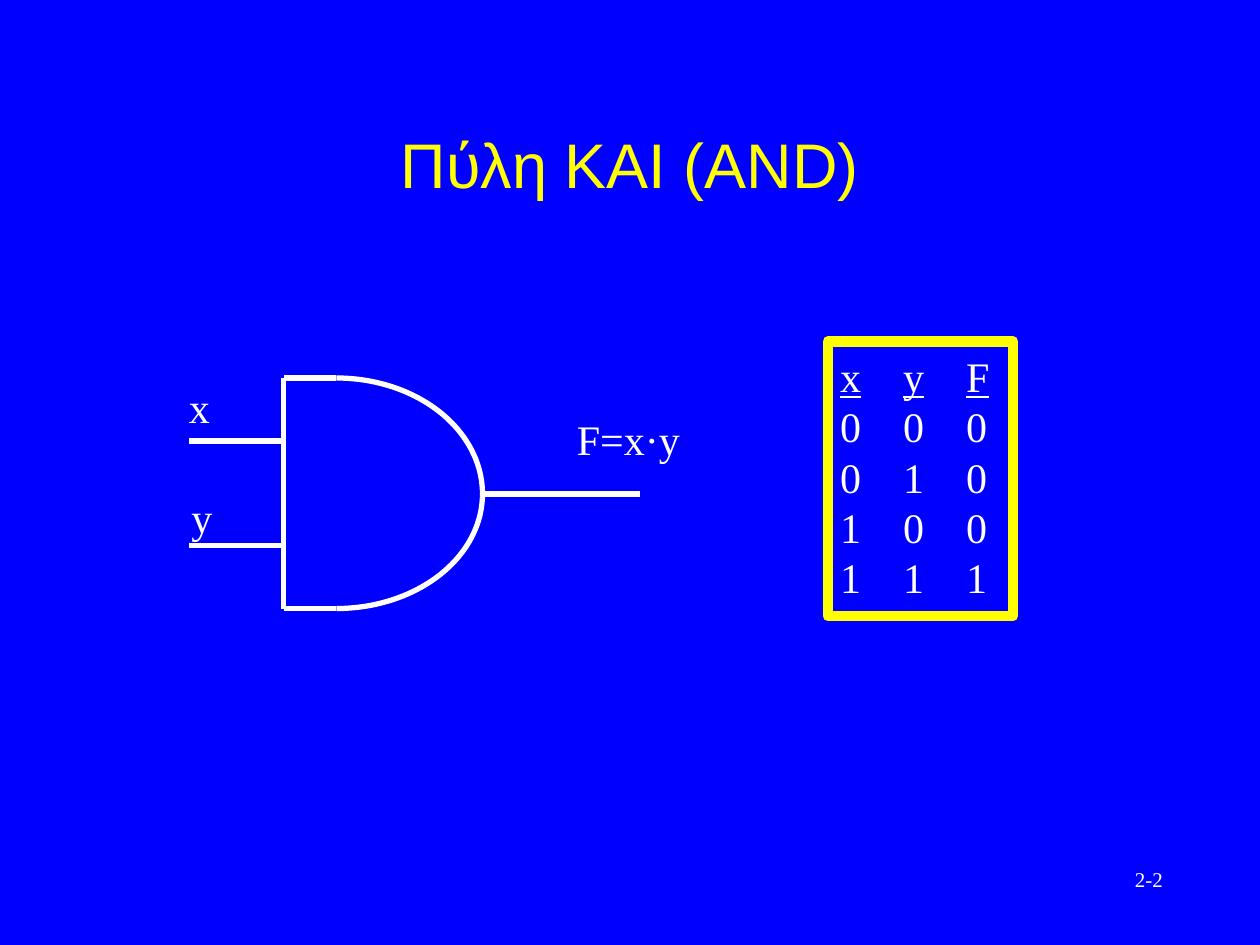
import math

import lxml.etree
import pptx
import pptx.dml.color
import pptx.enum.shapes
import pptx.enum.text
import pptx.oxml.ns
import pptx.util

Inches = pptx.util.Inches
Pt = pptx.util.Pt
qn = pptx.oxml.ns.qn


def color(value):
    return pptx.dml.color.RGBColor.from_string(value)


def write(frame, text, size=24, font="Times New Roman", ink="FFFFFF",
          align=pptx.enum.text.PP_ALIGN.LEFT, wrap=False,
          anchor=pptx.enum.text.MSO_ANCHOR.TOP, inset=0.07,
          underline_first=False, tabs=()):
    frame.word_wrap = wrap
    frame.auto_size = pptx.enum.text.MSO_AUTO_SIZE.NONE
    frame.vertical_anchor = anchor
    frame.margin_left = frame.margin_right = Inches(0.1)
    frame.margin_top, frame.margin_bottom = Inches(inset), Inches(0.05)
    for row, line in enumerate(text.split("\n")):
        paragraph = frame.add_paragraph() if row else frame.paragraphs[0]
        paragraph.alignment = align
        paragraph.line_spacing = Pt(size * 1.2)
        if tabs:
            stops = lxml.etree.SubElement(paragraph._p.get_or_add_pPr(), qn("a:tabLst"))
            for stop in tabs:
                lxml.etree.SubElement(stops, qn("a:tab"), pos=str(Inches(stop)), algn="l")
        run = paragraph.add_run()
        run.text = line
        run.font.name = font
        run.font.size = Pt(size)
        run.font.color.rgb = color(ink)
        run.font.underline = underline_first and row == 0


class GateSlide:
    white = "FFFFFF"
    yellow = "FFFF00"
    blue = "0000FF"

    def __init__(self, deck):
        self.slide = deck.slides.add_slide(deck.slide_layouts[5])
        self.shapes = self.slide.shapes
        self.slide.background.fill.solid()
        self.slide.background.fill.fore_color.rgb = color(self.blue)

    def title(self, text, left, top, width, height):
        heading = self.shapes.title
        heading.left, heading.top = Inches(left), Inches(top)
        heading.width, heading.height = Inches(width), Inches(height)
        write(heading.text_frame, text, size=36, font="Arial", ink=self.yellow,
              align=pptx.enum.text.PP_ALIGN.CENTER, wrap=True, inset=0.05,
              anchor=pptx.enum.text.MSO_ANCHOR.MIDDLE)

    def label(self, text, left, top, width, height, **style):
        box = self.shapes.add_textbox(*map(Inches, (left, top, width, height)))
        write(box.text_frame, text, **style)

    def wire(self, x1, y1, x2, y2):
        wire = self.shapes.add_connector(
            pptx.enum.shapes.MSO_CONNECTOR.STRAIGHT, *map(Inches, (x1, y1, x2, y2)))
        self.stroke(wire, self.white, 3)
        lxml.etree.SubElement(wire._element.spPr, qn("a:effectLst"))

    def quarter_arc(self, center_x, center_y, radius_x, radius_y, steps=40):
        angles = [math.pi / 2 * (1 - step / steps) for step in range(steps + 1)]
        points = [(Inches(center_x + radius_x * math.cos(angle)),
                   Inches(center_y + radius_y * math.sin(angle))) for angle in angles]
        builder = self.shapes.build_freeform(*points[0])
        builder.add_line_segments(points[1:], close=False)
        arc = builder.convert_to_shape()
        arc.fill.background()
        arc.shadow.inherit = False
        self.stroke(arc, self.white, 3)

    def truth_table(self, text, left, top, width, height):
        frame = self.shapes.add_shape(
            pptx.enum.shapes.MSO_SHAPE.RECTANGLE, *map(Inches, (left, top, width, height)))
        frame.fill.background()
        frame.shadow.inherit = False
        self.stroke(frame, self.yellow, 6)
        write(frame.text_frame, text, wrap=True, underline_first=True, tabs=(0.5, 1))

    def stroke(self, shape, ink, width):
        shape.line.color.rgb = color(ink)
        shape.line.width = Pt(width)


def main():
    deck = pptx.Presentation()
    deck.slide_width, deck.slide_height = Inches(10), Inches(7.5)
    gate = GateSlide(deck)

    gate.label("2-2", 8.91, 6.83, 0.53, 0.3, size=12, inset=0.05)
    gate.title("Πύλη ΚΑΙ (AND)", 0.75, 0.67, 8.5, 1.25)

    back, arc_start, tip = 2.25, 2.67, 3.83
    upper, middle, lower = 3, 3.92, 4.83
    for edge in (upper, lower):
        gate.quarter_arc(arc_start, middle, tip - arc_start, edge - middle)
        gate.wire(arc_start, edge, back, edge)
    gate.wire(back, upper, back, lower)
    for input_y in (3.5, 4.33):
        gate.wire(back, input_y, 1.5, input_y)
    gate.wire(tip, middle, 5.08, middle)

    gate.label("x", 1.4, 2.96, 0.37, 0.5)
    gate.label("y", 1.42, 3.83, 0.37, 0.5)
    gate.label("F=x·y", 4.48, 3.21, 1.02, 0.5)

    rows = ["x\ty\tF"]
    rows += [f"{x}\t{y}\t{x & y}" for x in (0, 1) for y in (0, 1)]
    gate.truth_table("\n".join(rows), 6.57, 2.71, 1.47, 2.18)

    deck.save("out.pptx")


if __name__ == "__main__":
    main()
